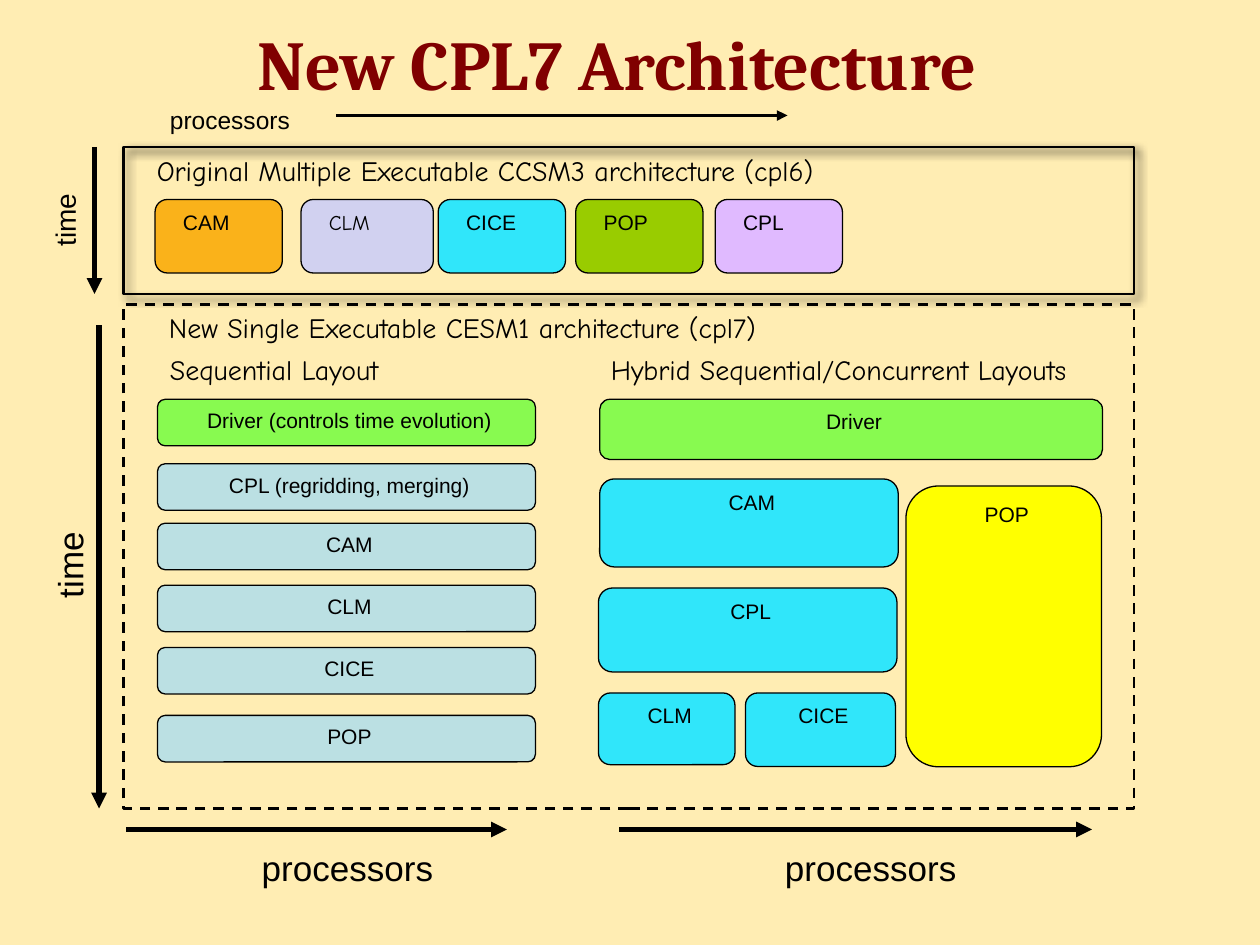
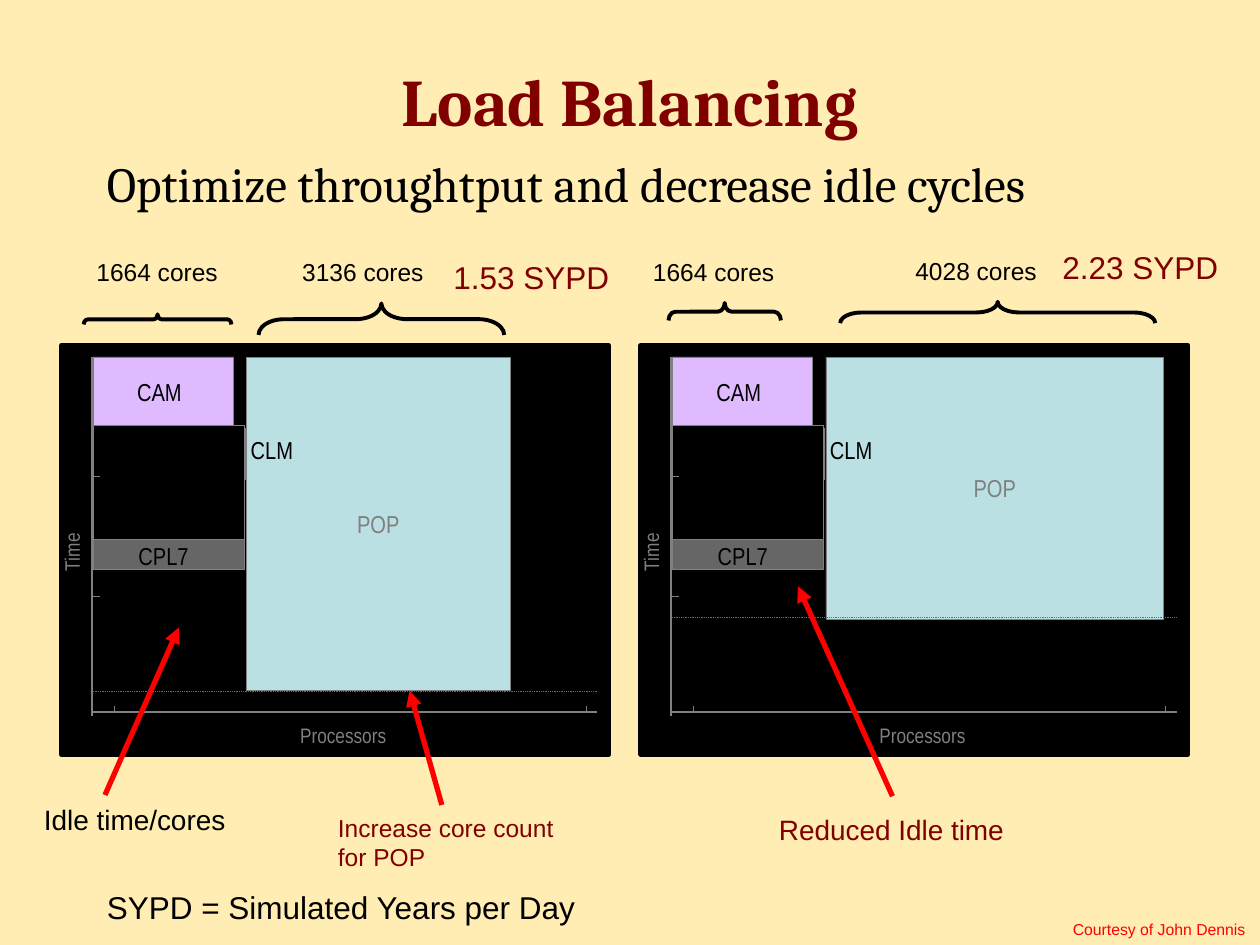
import dataclasses

import lxml.etree
import pptx
import pptx.dml.color
import pptx.enum.dml
import pptx.enum.shapes
import pptx.enum.text
import pptx.oxml.ns
import pptx.shapes.autoshape
import pptx.slide
import pptx.text.text
import pptx.util

Pt = pptx.util.Pt
RGBColor = pptx.dml.color.RGBColor
SHAPE = pptx.enum.shapes.MSO_SHAPE
DASH = pptx.enum.dml.MSO_LINE
ALIGN = pptx.enum.text.PP_ALIGN
ANCHOR = pptx.enum.text.MSO_ANCHOR
qn = pptx.oxml.ns.qn

CREAM = RGBColor(0xFF, 0xED, 0xB3)
MAROON = RGBColor(0x80, 0x00, 0x00)
BLACK = RGBColor(0x00, 0x00, 0x00)
RED = RGBColor(0xFF, 0x00, 0x00)
GRAY = RGBColor(0x80, 0x80, 0x80)
DARK_GRAY = RGBColor(0x66, 0x66, 0x66)
TEAL = RGBColor(0x00, 0x99, 0x99)
PALE_BLUE = RGBColor(0xBB, 0xE0, 0xE3)
CYAN = RGBColor(0x30, 0xE6, 0xFA)
GREEN = RGBColor(0x88, 0xFA, 0x50)
OLIVE = RGBColor(0x99, 0xCC, 0x00)
YELLOW = RGBColor(0xFF, 0xFF, 0x00)
ORANGE = RGBColor(0xFA, 0xB2, 0x1A)
LAVENDER = RGBColor(0xD1, 0xD1, 0xF0)
LILAC = RGBColor(0xE0, 0xBA, 0xFF)

SANS = "Arial"
NARROW = "Arial Narrow"
SERIF = "Cambria"
COMIC = "Comic Neue"


@dataclasses.dataclass
class Label:
    """Plain text at a place."""
    text: str
    left: float
    top: float
    width: float
    height: float
    size: float = 14
    font: str = SANS
    color: RGBColor = BLACK
    align: ALIGN = ALIGN.LEFT
    rotation: float = 0


@dataclasses.dataclass
class Block:
    """A rounded component box with its name."""
    text: str
    left: float
    top: float
    width: float
    height: float
    fill: RGBColor
    align: ALIGN = ALIGN.CENTER
    inset: float = 10.5
    font: str = SANS


@dataclasses.dataclass
class Line:
    """A straight line, with or without an arrowhead."""
    x1: float
    y1: float
    x2: float
    y2: float
    weight: float = 3
    color: RGBColor = BLACK
    arrow: bool = True
    dotted: bool = False


@dataclasses.dataclass
class Brace:
    """A curly brace lying on its side."""
    left: float
    top: float
    width: float
    height: float
    curve: float


@dataclasses.dataclass
class Panel:
    """A timing diagram that differs in its offset and ocean block."""
    offset: float
    pop_width: float
    pop_height: float
    clm_shift: float
    finish: float


def write_text(tf: pptx.text.text.TextFrame, text: str, *, size: float, font: str = SANS,
               color: RGBColor = BLACK, bold: bool = False, align: ALIGN = ALIGN.LEFT,
               anchor: ANCHOR = ANCHOR.TOP, inset: float = 7.2) -> None:
    """Write one formatted paragraph into a text frame."""
    tf.word_wrap = True
    tf.auto_size = pptx.enum.text.MSO_AUTO_SIZE.NONE
    tf.vertical_anchor = anchor
    tf.margin_left = Pt(inset)
    p = tf.paragraphs[0]
    p.alignment = align
    r = p.add_run()
    r.text = text
    r.font.size, r.font.name, r.font.bold = Pt(size), font, bold
    r.font.color.rgb = color


def add_slide(prs: pptx.presentation.Presentation, title: str, left: float, top: float,
              width: float, height: float, size: float) -> pptx.slide.Slide:
    """Add a slide with the shared title style."""
    s = prs.slides.add_slide(prs.slide_layouts[5])
    sp = s.shapes.title
    sp.left, sp.top, sp.width, sp.height = Pt(left), Pt(top), Pt(width), Pt(height)
    write_text(sp.text_frame, title, size=size, font=SERIF, color=MAROON, bold=True,
               align=ALIGN.CENTER, anchor=ANCHOR.MIDDLE)
    return s


def add_label(s: pptx.slide.Slide, label: Label) -> None:
    """Draw a text label."""
    sp = s.shapes.add_textbox(Pt(label.left), Pt(label.top), Pt(label.width), Pt(label.height))
    sp.rotation = label.rotation
    write_text(sp.text_frame, label.text, size=label.size, font=label.font,
               color=label.color, align=label.align)


def add_box(s: pptx.slide.Slide, kind: SHAPE, left: float, top: float, width: float,
            height: float, fill: RGBColor | None = None, line: RGBColor = BLACK,
            weight: float = 0.5) -> pptx.shapes.autoshape.Shape:
    """Draw a preset shape without a shadow."""
    sp = s.shapes.add_shape(kind, Pt(left), Pt(top), Pt(width), Pt(height))
    sp.shadow.inherit = False
    if fill is None:
        sp.fill.background()
    else:
        sp.fill.solid()
        sp.fill.fore_color.rgb = fill
    sp.line.color.rgb = line
    sp.line.width = Pt(weight)
    return sp


def add_block(s: pptx.slide.Slide, block: Block) -> None:
    """Draw a named component box."""
    sp = add_box(s, SHAPE.ROUNDED_RECTANGLE, block.left, block.top, block.width,
                 block.height, block.fill, weight=0.75)
    write_text(sp.text_frame, block.text, size=12, font=block.font, align=block.align,
               inset=block.inset)


def add_brace(s: pptx.slide.Slide, brace: Brace) -> None:
    """Draw a brace that points up."""
    sp = add_box(s, SHAPE.LEFT_BRACE, brace.left, brace.top, brace.width, brace.height,
                 weight=2.25)
    sp.adjustments[0] = brace.curve
    sp.rotation = 90


def add_line(s: pptx.slide.Slide, line: Line) -> None:
    """Draw a straight connector."""
    c = s.shapes.add_connector(pptx.enum.shapes.MSO_CONNECTOR.STRAIGHT, Pt(line.x1),
                               Pt(line.y1), Pt(line.x2), Pt(line.y2))
    c.line.color.rgb = line.color
    c.line.width = Pt(line.weight)
    if line.dotted:
        c.line.dash_style = DASH.ROUND_DOT
    sp_pr = c._element.spPr
    if line.arrow:
        lxml.etree.SubElement(sp_pr.find(qn("a:ln")), qn("a:tailEnd"), type="triangle")
    lxml.etree.SubElement(sp_pr, qn("a:effectLst"))


def add_frame_shadow(sp: pptx.shapes.autoshape.Shape) -> None:
    """Give a frame a soft diagonal shadow."""
    effects = sp._element.spPr.find(qn("a:effectLst"))
    shadow = lxml.etree.SubElement(effects, qn("a:outerShdw"), blurRad=str(Pt(5)),
                                   dist=str(Pt(3)), dir="2700000", algn="tl", rotWithShape="0")
    color = lxml.etree.SubElement(shadow, qn("a:srgbClr"), val=str(BLACK))
    lxml.etree.SubElement(color, qn("a:alpha"), val="75000")


def build_architecture(prs: pptx.presentation.Presentation) -> None:
    """Build the slide on the coupler architecture."""
    s = add_slide(prs, "New CPL7 Architecture", 46.5, 12, 612, 48, 40)
    new_frame = add_box(s, SHAPE.RECTANGLE, 70.5, 174, 577.5, 288, weight=1.5)
    new_frame.line.dash_style = DASH.DASH
    add_frame_shadow(add_box(s, SHAPE.RECTANGLE, 70.5, 84, 577.5, 84, weight=1.5))

    multiple = [("CAM", 88.6, 72.7, ORANGE, SANS), ("CLM", 172, 75.6, LAVENDER, COMIC),
                ("CICE", 250.4, 72.7, CYAN, SANS), ("POP", 329, 72.7, OLIVE, SANS),
                ("CPL", 408.7, 72.7, LILAC, SANS)]
    blocks = [Block(text, left, 114, width, 42, fill, ALIGN.LEFT, 13.9, font)
              for text, left, width, fill, font in multiple]
    sequential = [("Driver (controls time evolution)", 228.2), ("CPL (regridding, merging)", 265),
                  ("CAM", 299), ("CLM", 334.4), ("CICE", 370), ("POP", 408.8)]
    blocks += [Block(text, 90, top, 216, 26.6, PALE_BLUE if i else GREEN)
               for i, (text, top) in enumerate(sequential)]
    blocks += [
        Block("Driver", 342.7, 228.2, 287.3, 34.4, GREEN),
        Block("CAM", 342.7, 273.7, 170.6, 50.3, CYAN),
        Block("CPL", 342, 336, 170.6, 48, CYAN),
        Block("CLM", 342, 396, 78, 41, CYAN),
        Block("CICE", 426, 396, 85.7, 42, CYAN),
        Block("POP", 517.7, 277.7, 111.8, 160.5, YELLOW),
    ]
    for block in blocks:
        add_block(s, block)

    for label in (
        Label("Original Multiple Executable CCSM3 architecture (cpl6)", 82.5, 84, 430, 26.6, 16, COMIC),
        Label("New Single Executable CESM1 architecture (cpl7)", 89.5, 174, 415, 26.6, 16, COMIC),
        Label("Sequential Layout", 90, 198, 146, 26.6, 16, COMIC),
        Label("Hybrid Sequential/Concurrent Layouts", 342, 198, 294, 26.6, 16, COMIC),
        Label("processors", 90, 56.4, 90, 24),
        Label("processors", 142.5, 480, 116, 31, 20),
        Label("processors", 441.5, 480, 116, 31, 20),
        Label("time", 13, 112.4, 48.2, 26.6, 16, align=ALIGN.CENTER, rotation=270),
        Label("time", -39.6, 307.4, 158.4, 31, 20, align=ALIGN.CENTER, rotation=270),
    ):
        add_label(s, label)

    for line in (
        Line(192, 66, 450, 66, 2),
        Line(54, 84, 54, 168),
        Line(56.6, 186, 56.6, 462),
        Line(72, 474, 289.7, 474),
        Line(354, 474, 624, 474),
    ):
        add_line(s, line)


def add_panel(s: pptx.slide.Slide, panel: Panel) -> None:
    """Draw one timing diagram."""
    x, top, axis = panel.offset, 204, 407
    start = x + 53.2
    pop_left, pop_w, pop_h = x + 141, panel.pop_width, panel.pop_height
    clm = x + 139.7 + panel.clm_shift
    add_box(s, SHAPE.RECTANGLE, x + 35.3, 197.3, 312.5, 234, BLACK, weight=3)
    for left, y, width, height, fill in (
        (pop_left, top, pop_w, pop_h, PALE_BLUE),
        (start, 243, 86.4, 65, BLACK),
        (start, top, 80, 39, LILAC),
        (start, 308, 86.4, 17.6, DARK_GRAY),
        (clm, 245, 0.72, 29, GRAY),
    ):
        add_box(s, SHAPE.RECTANGLE, left, y, width, height, fill, GRAY)
    for label in (
        Label("POP", pop_left + pop_w / 2 - 25, top + pop_h / 2 - 12, 50, 24,
              font=NARROW, color=GRAY, align=ALIGN.CENTER),
        Label("CAM", x + 71.3, 212, 45, 24, font=NARROW),
        Label("CPL7", x + 72, 305.4, 48, 24, font=NARROW),
        Label("CLM", clm - 3.6, 245, 46.8, 24.5, font=NARROW),
        Label("Processors", x + 164.4, 409.6, 80.6, 21.8, 12, NARROW, GRAY),
        Label("Time", x + 18, 299.6, 46, 21.8, 12, NARROW, GRAY, rotation=270),
    ):
        add_label(s, label)
    lines = [Line(x + 52.6, top, x + 52.6, 409, 1, GRAY, False),
             Line(x + 341.3, axis, start, axis, 1, GRAY, False),
             Line(x + 341.3, panel.finish, start, panel.finish, 0.5, TEAL, False, True)]
    lines += [Line(x + dx, 403.3, x + dx, axis, 0.25, GRAY, False) for dx in (65, 335)]
    lines += [Line(start, y, start + 4, y, 0.25, GRAY, False)
              for y in (top, top + 68.3, top + 136.6)]
    for line in lines:
        add_line(s, line)


def build_load_balancing(prs: pptx.presentation.Presentation) -> None:
    """Build the slide that compares two processor layouts."""
    s = add_slide(prs, "Load Balancing", 54, 12, 612, 90, 38)
    add_panel(s, Panel(0, 150.5, 190.8, 0, 395))
    add_panel(s, Panel(331, 193, 149.8, 0, 353))
    for brace in (
        Brace(87.1, 140.3, 5.8, 84.4, 0.39),
        Brace(208.9, 112.2, 18, 140.4, 0.81),
        Brace(409.1, 146, 10, 64.2, 0.39),
        Brace(564, 88.6, 12.2, 180, 0.99),
    ):
        add_brace(s, brace)
    for label in (
        Label("Optimize throughtput and decrease idle cycles", 54, 84, 572, 41, 28, SERIF),
        Label("1664 cores", 48, 143.4, 96, 24),
        Label("3136 cores", 165.6, 143.4, 92, 24),
        Label("1.53 SYPD", 252, 144, 108, 29, 18, color=MAROON),
        Label("1664 cores", 366, 143.4, 96, 24),
        Label("4028 cores", 516, 142.8, 92, 24),
        Label("2.23 SYPD", 600, 138, 108, 29, 18, color=MAROON),
        Label("Idle time/cores", 18, 455, 137, 26.6, 16),
        Label("Increase core count for POP", 186, 461, 156, 41, color=MAROON),
        Label("Reduced Idle time", 438, 461, 148, 26.6, 16, color=MAROON),
        Label("SYPD = Simulated Years per Day", 54, 504, 468, 29, 18),
        Label("Courtesy of John Dennis", 606, 522, 116, 18, 9, color=RED),
    ):
        add_label(s, label)
    for line in (
        Line(60, 454.3, 102.2, 358.6, color=RED),
        Line(252.5, 460, 234, 394.6, color=RED),
        Line(510, 455, 456, 335, color=RED),
    ):
        add_line(s, line)


def main() -> None:
    """Build and save the presentation."""
    prs = pptx.Presentation()
    prs.slide_width, prs.slide_height = Pt(720), Pt(540)
    fill = prs.slide_master.background.fill
    fill.solid()
    fill.fore_color.rgb = CREAM
    build_architecture(prs)
    build_load_balancing(prs)
    prs.save("out.pptx")


if __name__ == "__main__":
    main()
